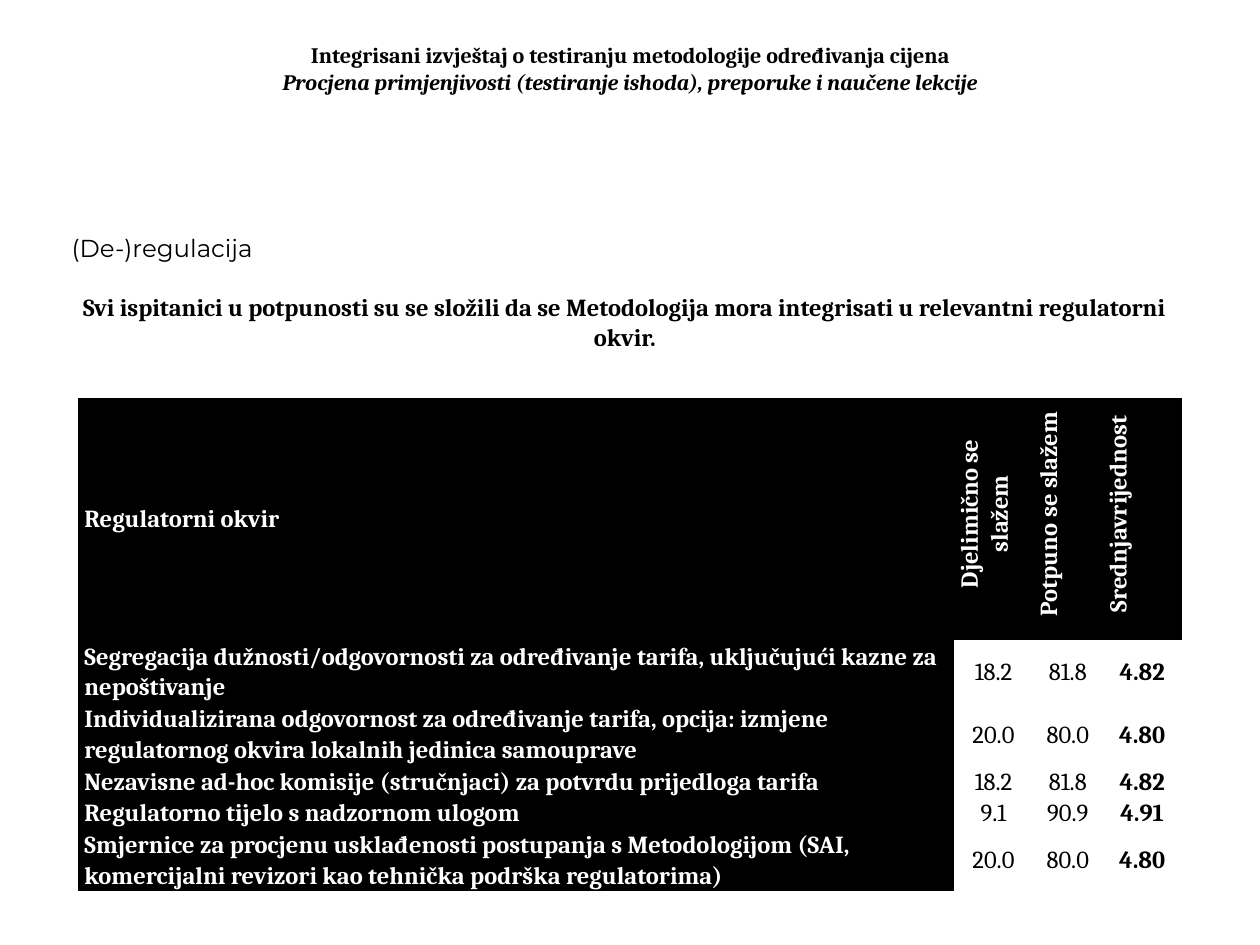
from pptx import Presentation
from pptx.dml.color import RGBColor
from pptx.enum.text import MSO_ANCHOR, MSO_AUTO_SIZE, PP_ALIGN
from pptx.util import Inches, Pt

COLORS = {"black": "000000", "white": "FFFFFF"}
NO_STYLE = "{2D5ABB26-0587-4C30-8999-92F81FD0307C}"


def format_run(r, size, color="black", bold=False, italic=False, font="Cambria"):
    r.font.name = font
    r.font.size = Pt(size)
    r.font.bold = bold
    r.font.italic = italic
    r.font.color.rgb = RGBColor.from_string(COLORS[color])


prs = Presentation()
prs.slide_width = Inches(10)
prs.slide_height = Inches(7.5)
s = prs.slides.add_slide(prs.slide_layouts[5])

title = s.shapes.title
title.left, title.top = Inches(0.5), Inches(0.3)
title.width, title.height = Inches(9), Inches(0.48)
tf = title.text_frame
tf.text = (
    "Integrisani izvještaj o testiranju metodologije određivanja cijena\v"
    "Procjena primjenjivosti (testiranje ishoda), preporuke i naučene lekcije"
)
tf.auto_size = MSO_AUTO_SIZE.NONE
tf.vertical_anchor = MSO_ANCHOR.MIDDLE
p = tf.paragraphs[0]
p.alignment = PP_ALIGN.CENTER
for r, italic in zip(p.runs, (False, True)):
    format_run(r, 12.6, bold=True, italic=italic)

body = s.shapes.add_textbox(Inches(0.47), Inches(1.8), Inches(8.98), Inches(5.16))
tf = body.text_frame
tf.word_wrap = True
p = tf.paragraphs[0]
p.text = "(De-)regulacija"
p.space_after = Pt(17)
format_run(p.runs[0], 14, font="Montserrat")
p = tf.add_paragraph()
p.text = (
    "Svi ispitanici u potpunosti su se složili da se Metodologija mora "
    "integrisati u relevantni regulatorni okvir."
)
p.alignment = PP_ALIGN.CENTER
format_run(p.runs[0], 14, bold=True)

rows = [
    ("Regulatorni okvir", "Djelimično se slažem", "Potpuno se slažem", "Srednjavrijednost"),
    ("Segregacija dužnosti/odgovornosti za određivanje tarifa, uključujući kazne za nepoštivanje",
     "18.2", "81.8", "4.82"),
    ("Individualizirana odgovornost za određivanje tarifa, opcija: izmjene regulatornog okvira "
     "lokalnih jedinica samouprave", "20.0", "80.0", "4.80"),
    ("Nezavisne ad-hoc komisije (stručnjaci) za potvrdu prijedloga tarifa", "18.2", "81.8", "4.82"),
    ("Regulatorno tijelo s nadzornom ulogom", "9.1", "90.9", "4.91"),
    ("Smjernice za procjenu usklađenosti postupanja s Metodologijom (SAI, komercijalni revizori "
     "kao tehnička podrška regulatorima)", "20.0", "80.0", "4.80"),
]
col_widths = [6.95, 0.63, 0.55, 0.63]
row_heights = [1.76] + [0.2] * 5

frame = s.shapes.add_table(
    len(rows), len(col_widths), Inches(0.62), Inches(3.16), Inches(8.75), Inches(3.76)
)
table = frame.table
table.horz_banding = False
table._tbl.tblPr.find("{*}tableStyleId").text = NO_STYLE
for col, width in zip(table.columns, col_widths):
    col.width = Inches(width)
for row, height in zip(table.rows, row_heights):
    row.height = Inches(height)

for i, values in enumerate(rows):
    for j, value in enumerate(values):
        cell = table.cell(i, j)
        heading = i == 0 or j == 0
        cell.text = value
        cell.vertical_anchor = MSO_ANCHOR.MIDDLE
        cell.margin_left = cell.margin_right = Inches(0.05)
        cell.margin_top = cell.margin_bottom = 0
        if heading:
            cell.fill.solid()
            cell.fill.fore_color.rgb = RGBColor.from_string(COLORS["black"])
        else:
            cell.fill.background()
        p = cell.text_frame.paragraphs[0]
        p.line_spacing = 1.07
        p.alignment = PP_ALIGN.LEFT if j == 0 else PP_ALIGN.CENTER
        if i == 0 and j > 0:
            cell._tc.get_or_add_tcPr().set("vert", "vert270")
            p._p.get_or_add_pPr().set("marL", str(Inches(0.08)))
        format_run(p.runs[0], 14, "white" if heading else "black", bold=heading or j == 3)

prs.save("out.pptx")
